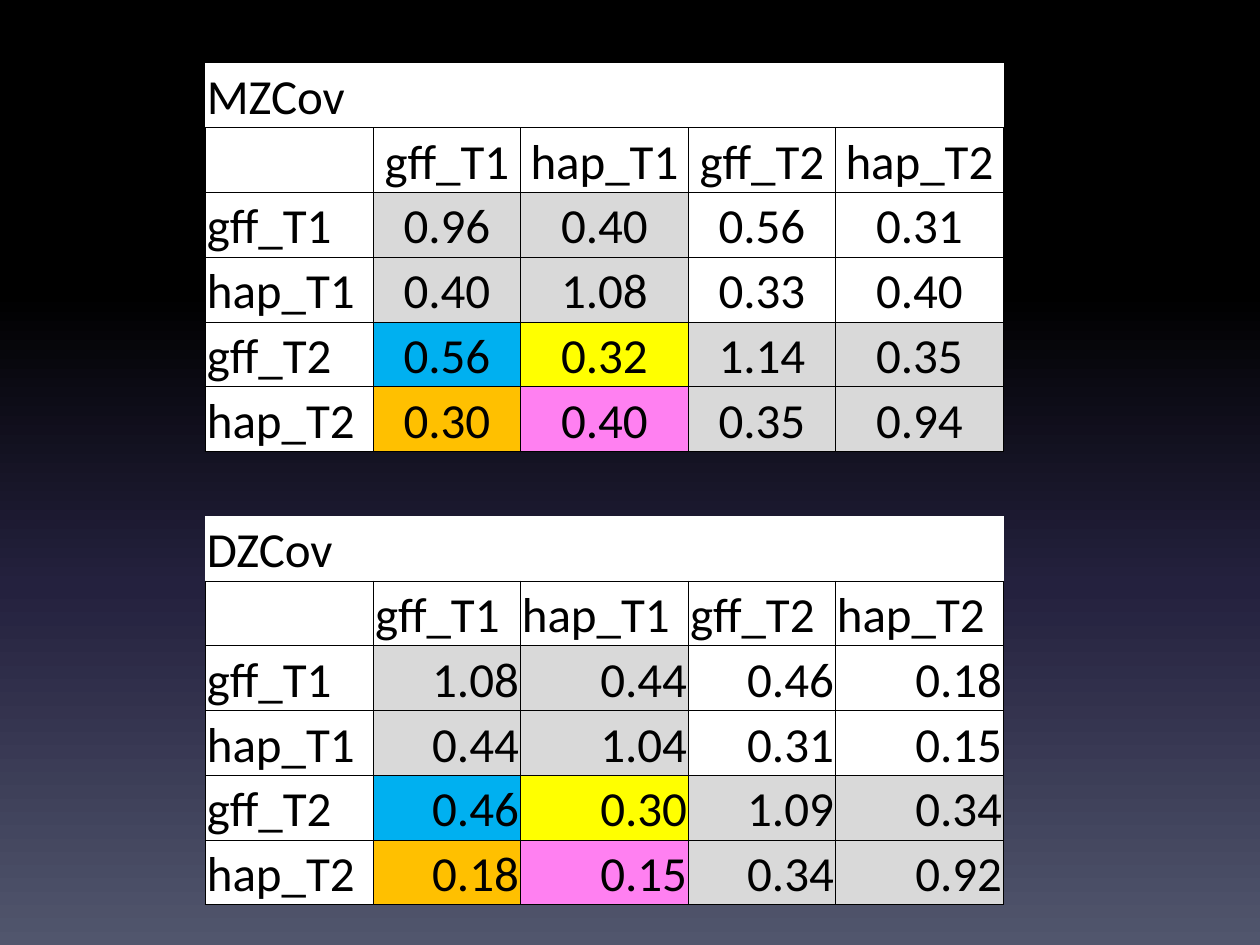
from lxml.etree import SubElement
from pptx import Presentation
from pptx.dml.color import RGBColor
from pptx.enum.text import MSO_ANCHOR, PP_ALIGN
from pptx.oxml.ns import qn
from pptx.util import Cm, Pt

BLACK, WHITE, GREY = "000000", "FFFFFF", "D9D9D9"
NO_STYLE = "{2D5ABB26-0587-4C30-8999-92F81FD0307C}"
BACKGROUND_STOPS = [(0, BLACK), (31, BLACK), (62, "24213E"), (100, "51566D")]

VARIABLES = ["gff_T1", "hap_T1", "gff_T2", "hap_T2"]
LABEL_WIDTH = Cm(3.39)
COLUMN_WIDTHS = [LABEL_WIDTH, Cm(2.96), Cm(3.39), Cm(2.96), Cm(3.39)]
TABLE_LEFT, TABLE_HEIGHT = Cm(4.14), Cm(7.83)

MZ_COVARIANCES = [
    ["0.96", "0.40", "0.56", "0.31"],
    ["0.40", "1.08", "0.33", "0.40"],
    ["0.56", "0.32", "1.14", "0.35"],
    ["0.30", "0.40", "0.35", "0.94"],
]
DZ_COVARIANCES = [
    ["1.08", "0.44", "0.46", "0.18"],
    ["0.44", "1.04", "0.31", "0.15"],
    ["0.46", "0.30", "1.09", "0.34"],
    ["0.18", "0.15", "0.34", "0.92"],
]
VALUE_FILLS = [
    [GREY, GREY, WHITE, WHITE],
    [GREY, GREY, WHITE, WHITE],
    ["00B0F0", "FFFF00", GREY, GREY],
    ["FFC000", "FF80F1", GREY, GREY],
]


def color(value):
    return RGBColor.from_string(value)


def set_background(slide, stops):
    fill = slide.background.fill
    fill.gradient()
    fill.gradient_angle = 270
    stop_list = next(slide.element.iter(qn("a:gsLst")))
    for stop in list(stop_list):
        stop_list.remove(stop)
    for position, value in stops:
        stop = SubElement(stop_list, qn("a:gs"), pos=str(position * 1000))
        SubElement(stop, qn("a:srgbClr"), val=value)


def write_text(cell, text, size=28, font="Calibri", fill=BLACK, align=PP_ALIGN.LEFT):
    paragraph = cell.text_frame.paragraphs[0]
    paragraph.alignment = align
    paragraph.font.size = Pt(size)
    if text:
        run = paragraph.add_run()
        run.text = text
        run.font.size = Pt(size)
        run.font.name = font
        run.font.color.rgb = color(fill)


def format_cell(cell, fill, edges):
    cell.vertical_anchor = MSO_ANCHOR.BOTTOM
    cell.margin_left = cell.margin_right = cell.margin_top = Cm(0.03)
    cell.margin_bottom = 0
    # Borders come before the fill in the cell properties
    properties = cell._tc.get_or_add_tcPr()
    for edge in edges:
        line = SubElement(properties, qn(f"a:ln{edge}"), w=str(Pt(0.5)))
        solid = SubElement(line, qn("a:solidFill"))
        SubElement(solid, qn("a:srgbClr"), val=BLACK)
    cell.fill.solid()
    cell.fill.fore_color.rgb = color(fill)


def add_covariance_table(slide, title, values, top, header_align, value_align):
    rows = [[title, "", "", "", ""], ["", *VARIABLES]]
    rows += [[name, *line] for name, line in zip(VARIABLES, values)]
    frame = slide.shapes.add_table(
        len(rows), len(COLUMN_WIDTHS), TABLE_LEFT, top, sum(COLUMN_WIDTHS), TABLE_HEIGHT
    )
    table = frame.table
    table.first_row = table.horz_banding = False
    next(frame._element.iter(qn("a:tableStyleId"))).text = NO_STYLE
    for column, width in zip(table.columns, COLUMN_WIDTHS):
        column.width = width

    for r, texts in enumerate(rows):
        for c, text in enumerate(texts):
            fill, align = WHITE, PP_ALIGN.LEFT
            if r > 1 and c > 0:
                fill, align = VALUE_FILLS[r - 2][c - 1], value_align
            elif r == 1:
                align = header_align
            cell = table.cell(r, c)
            format_cell(cell, fill, "LRTB" if r else "B")
            write_text(cell, text, align=align)


def main():
    presentation = Presentation()
    presentation.slide_width, presentation.slide_height = Cm(25.4), Cm(19.05)
    slide = presentation.slides.add_slide(presentation.slide_layouts[6])
    set_background(slide, BACKGROUND_STOPS)

    # Monozygotic twins above, dizygotic twins below
    add_covariance_table(
        slide, "MZCov", MZ_COVARIANCES, Cm(1.27), PP_ALIGN.CENTER, PP_ALIGN.CENTER
    )
    add_covariance_table(
        slide, "DZCov", DZ_COVARIANCES, Cm(10.41), PP_ALIGN.LEFT, PP_ALIGN.RIGHT
    )
    presentation.save("out.pptx")


if __name__ == "__main__":
    main()
